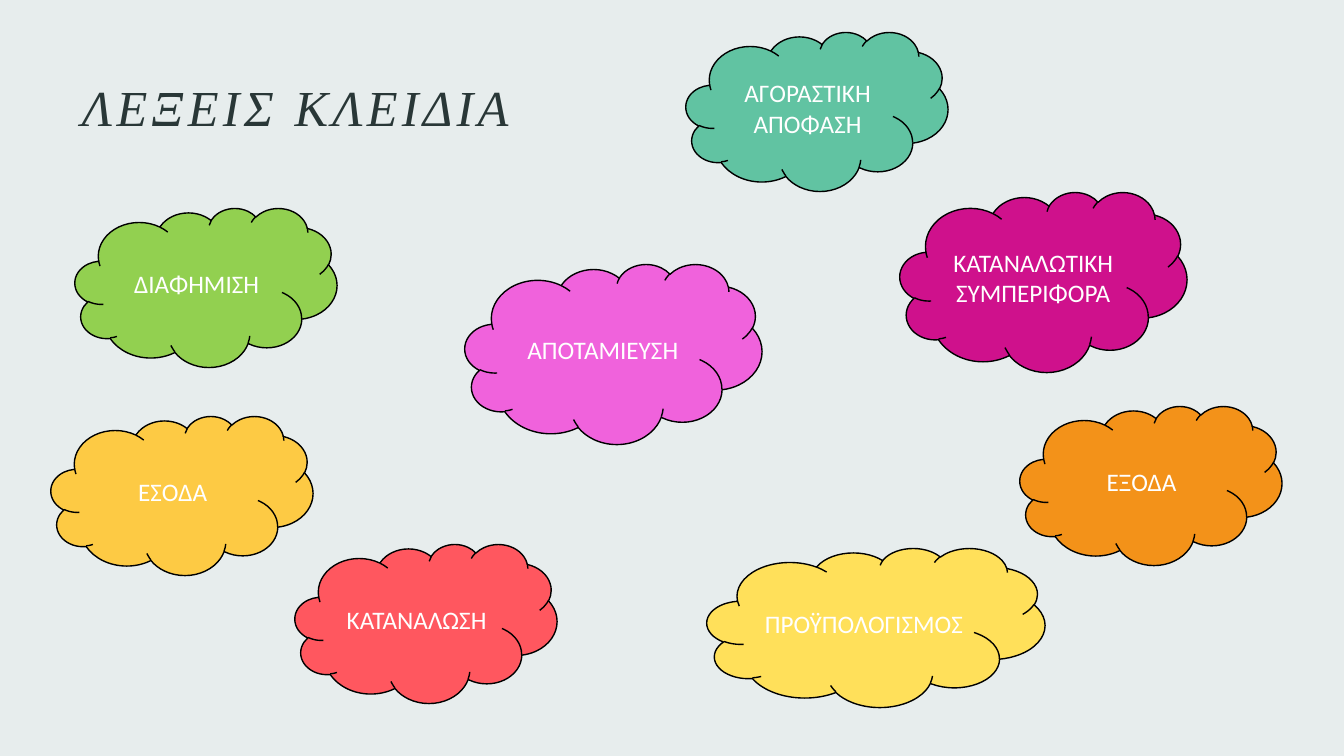
import pptx
import pptx.util
import pptx.dml.color
import pptx.enum.shapes
import pptx.enum.text

RGB = pptx.dml.color.RGBColor
PALE = RGB(0xE7, 0xED, 0xED)
SLATE = RGB(0x29, 0x37, 0x37)
BLACK = RGB(0x00, 0x00, 0x00)
WHITE = RGB(0xFF, 0xFF, 0xFF)
GREEN = RGB(0x92, 0xD0, 0x50)
RED = RGB(0xFF, 0x57, 0x5F)
PINK = RGB(0xF0, 0x62, 0xDC)
YELLOW = RGB(0xFF, 0xE0, 0x5A)
MAGENTA = RGB(0xCF, 0x11, 0x8C)
GOLD = RGB(0xFD, 0xCA, 0x44)
ORANGE = RGB(0xF3, 0x92, 0x19)
TEAL = RGB(0x61, 0xC3, 0xA2)

SLIDE_SIZE = (1344, 756)
SMALL = (262, 159)
MEDIUM = (287, 180)
LARGE = (297, 180)
WIDE = (338, 159)

KEYWORDS = [
    ("ΔΙΑΦΗΜΙΣΗ", (75, 208), SMALL, GREEN),
    ("ΚΑΤΑΝΑΛΩΣΗ", (295, 544), SMALL, RED),
    ("ΑΠΟΤΑΜΙΕΥΣΗ", (465, 264), LARGE, PINK),
    ("ΠΡΟΫΠΟΛΟΓΙΣΜΟΣ", (707, 548), WIDE, YELLOW),
    ("ΚΑΤΑΝΑΛΩΤΙΚΗ ΣΥΜΠΕΡΙΦΟΡΑ", (900, 192), MEDIUM, MAGENTA),
    ("ΕΣΟΔΑ", (51, 416), SMALL, GOLD),
    ("ΕΞΟΔΑ", (1020, 406), SMALL, ORANGE),
    ("ΑΓΟΡΑΣΤΙΚΗ ΑΠΟΦΑΣΗ", (686, 32), SMALL, TEAL),
]


def px(length):
    return pptx.util.Emu(round(length * 914400 / 100.8))


class KeywordPage:
    title_font = "Times New Roman"
    body_font = "Calibri"

    def __init__(self, deck):
        self.page = deck.slides.add_slide(deck.slide_layouts[5])
        background = self.page.background.fill
        background.solid()
        background.fore_color.rgb = PALE

    def add_label(self, box, text, anchor, font, size, color):
        """Put one centred run into the box and return it."""
        frame = box.text_frame
        frame.word_wrap = True
        frame.vertical_anchor = anchor
        para = frame.paragraphs[0]
        para.alignment = pptx.enum.text.PP_ALIGN.CENTER
        span = para.add_run()
        span.text = text
        span.font.name = font
        span.font.size = pptx.util.Pt(size)
        span.font.color.rgb = color
        return span

    def title(self, text, left, top, width, height):
        box = self.page.shapes.title
        box.left, box.top = px(left), px(top)
        box.width, box.height = px(width), px(height)
        span = self.add_label(box, text, pptx.enum.text.MSO_ANCHOR.BOTTOM,
                              self.title_font, 36, SLATE)
        span.font.italic = True
        span.font._element.set("spc", "300")
        box.text_frame.paragraphs[0].line_spacing = 0.9

    def cloud(self, text, corner, size, color):
        box = self.page.shapes.add_shape(
            pptx.enum.shapes.MSO_SHAPE.CLOUD, *map(px, corner + size))
        box.shadow.inherit = False
        box.fill.solid()
        box.fill.fore_color.rgb = color
        box.line.color.rgb = BLACK
        box.line.width = pptx.util.Pt(1)
        self.add_label(box, text, pptx.enum.text.MSO_ANCHOR.MIDDLE,
                       self.body_font, 18, WHITE)


def main():
    deck = pptx.Presentation()
    deck.slide_width, deck.slide_height = map(px, SLIDE_SIZE)
    page = KeywordPage(deck)
    page.title("ΛΕΞΕΙΣ ΚΛΕΙΔΙΑ", 51, 31, 489, 112)
    for keyword in KEYWORDS:
        page.cloud(*keyword)
    deck.save("out.pptx")


if __name__ == "__main__":
    main()
